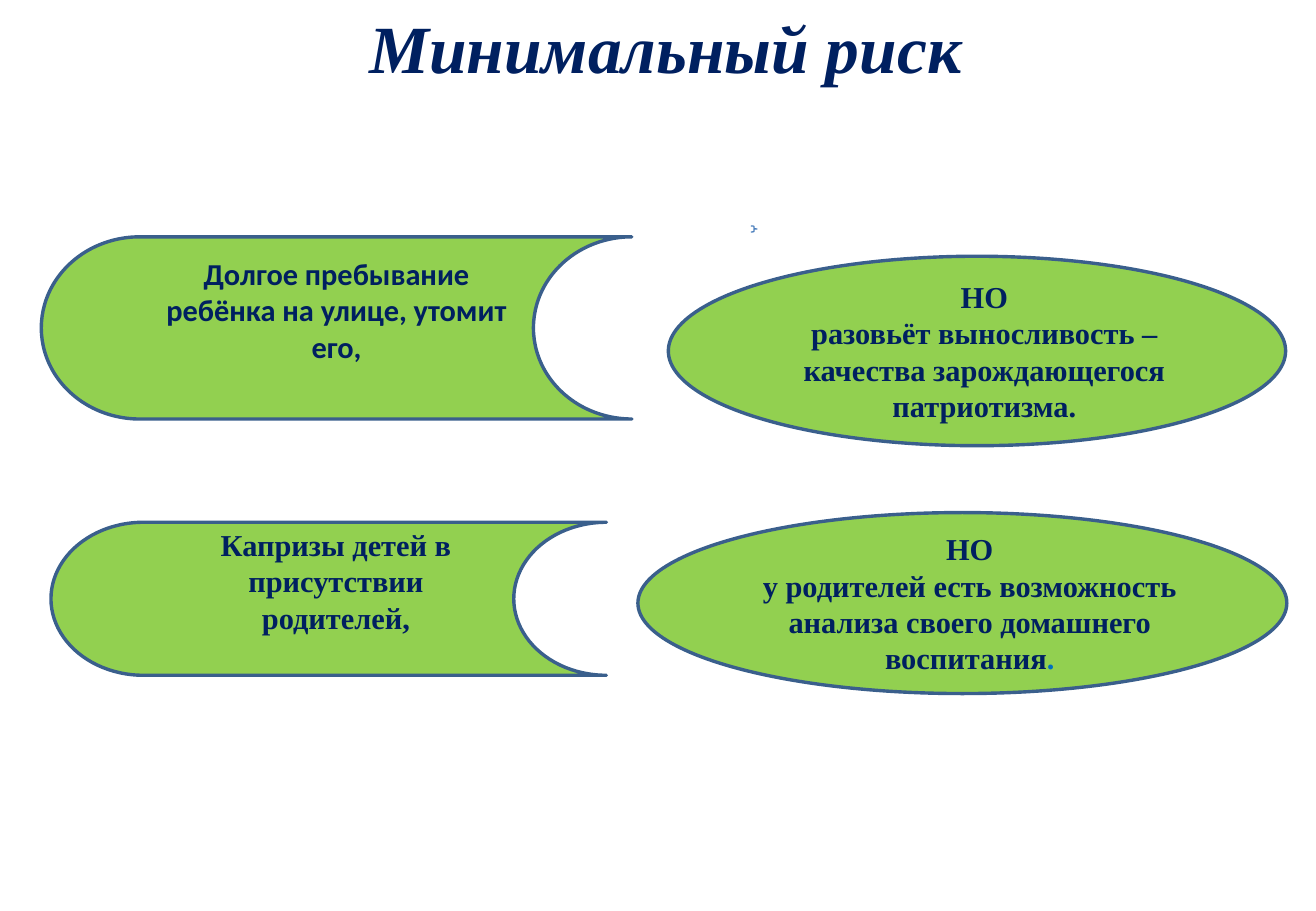
from dataclasses import dataclass

from pptx import Presentation
from pptx.dml.color import RGBColor
from pptx.enum.shapes import MSO_SHAPE
from pptx.enum.text import MSO_ANCHOR, MSO_AUTO_SIZE, PP_ALIGN
from pptx.util import Pt

EMU_PER_PX = 9144


@dataclass(frozen=True)
class Theme:
    navy: RGBColor = RGBColor(0x00, 0x20, 0x60)
    blue: RGBColor = RGBColor(0x00, 0x70, 0xC0)
    green: RGBColor = RGBColor(0x92, 0xD0, 0x50)
    outline: RGBColor = RGBColor(0x3A, 0x5F, 0x8C)
    brace: RGBColor = RGBColor(0x4B, 0x7E, 0xBC)
    serif: str = "Times New Roman"
    sans: str = "Calibri"
    title_size: int = 40
    body_size: int = 18
    outline_width: float = 2
    brace_width: float = 0.75


THEME = Theme()


def px(value):
    return value * EMU_PER_PX


def add_run(paragraph, text, size, color=THEME.navy, font_name=THEME.serif, italic=False):
    run = paragraph.add_run()
    run.text = text
    run.font.name = font_name
    run.font.size = Pt(size)
    run.font.bold = True
    run.font.italic = italic
    run.font.color.rgb = color


def set_title(slide, text, box):
    title = slide.shapes.title
    title.left, title.top, title.width, title.height = map(px, box)
    frame = title.text_frame
    frame.auto_size = MSO_AUTO_SIZE.NONE
    frame.word_wrap = True
    frame.vertical_anchor = MSO_ANCHOR.TOP
    paragraph = frame.paragraphs[0]
    paragraph.alignment = PP_ALIGN.CENTER
    add_run(paragraph, text, THEME.title_size, italic=True)


def add_outlined_shape(slide, kind, box, color, width):
    shape = slide.shapes.add_shape(kind, *map(px, box))
    shape.shadow.inherit = False
    shape.line.color.rgb = color
    shape.line.width = Pt(width)
    return shape


def add_card(slide, kind, box, insets, paragraphs, font_name=THEME.serif):
    shape = add_outlined_shape(slide, kind, box, THEME.outline, THEME.outline_width)
    shape.fill.solid()
    shape.fill.fore_color.rgb = THEME.green
    frame = shape.text_frame
    frame.word_wrap = True
    frame.vertical_anchor = MSO_ANCHOR.MIDDLE
    frame.margin_left, frame.margin_right, frame.margin_bottom = map(px, insets)
    for index, runs in enumerate(paragraphs):
        paragraph = frame.add_paragraph() if index else frame.paragraphs[0]
        paragraph.alignment = PP_ALIGN.CENTER
        for text, color in runs:
            add_run(paragraph, text, THEME.body_size, color, font_name)


def add_brace(slide, box):
    brace = add_outlined_shape(slide, MSO_SHAPE.RIGHT_BRACE, box, THEME.brace, THEME.brace_width)
    brace.fill.background()


def main():
    presentation = Presentation()
    presentation.slide_width = px(1083)
    presentation.slide_height = px(750)
    slide = presentation.slides.add_slide(presentation.slide_layouts[5])
    storage = MSO_SHAPE.FLOWCHART_STORED_DATA
    ellipse = MSO_SHAPE.OVAL
    navy = THEME.navy

    set_title(slide, "Минимальный риск", (168, 0, 759, 77))
    add_card(slide, storage, (34, 195, 486, 150), (10, 10, 35),
             [[("Долгое пребывание ребёнка на улице, утомит его,", navy)]], THEME.sans)
    add_brace(slide, (618, 186, 5, 5))
    add_card(slide, ellipse, (550, 211, 508, 156), (22, 10, 5),
             [[("НО", navy)],
              [("разовьёт выносливость – качества зарождающегося патриотизма.", navy)]])
    add_card(slide, storage, (42, 430, 457, 126), (32, 20, 35),
             [[("Капризы детей в присутствии родителей,", navy)]])
    add_card(slide, ellipse, (525, 422, 534, 149), (22, 10, 5),
             [[("НО", navy)],
              [("у родителей есть возможность анализа своего домашнего воспитания", navy),
               (".", THEME.blue)]])
    presentation.save("out.pptx")


if __name__ == "__main__":
    main()
